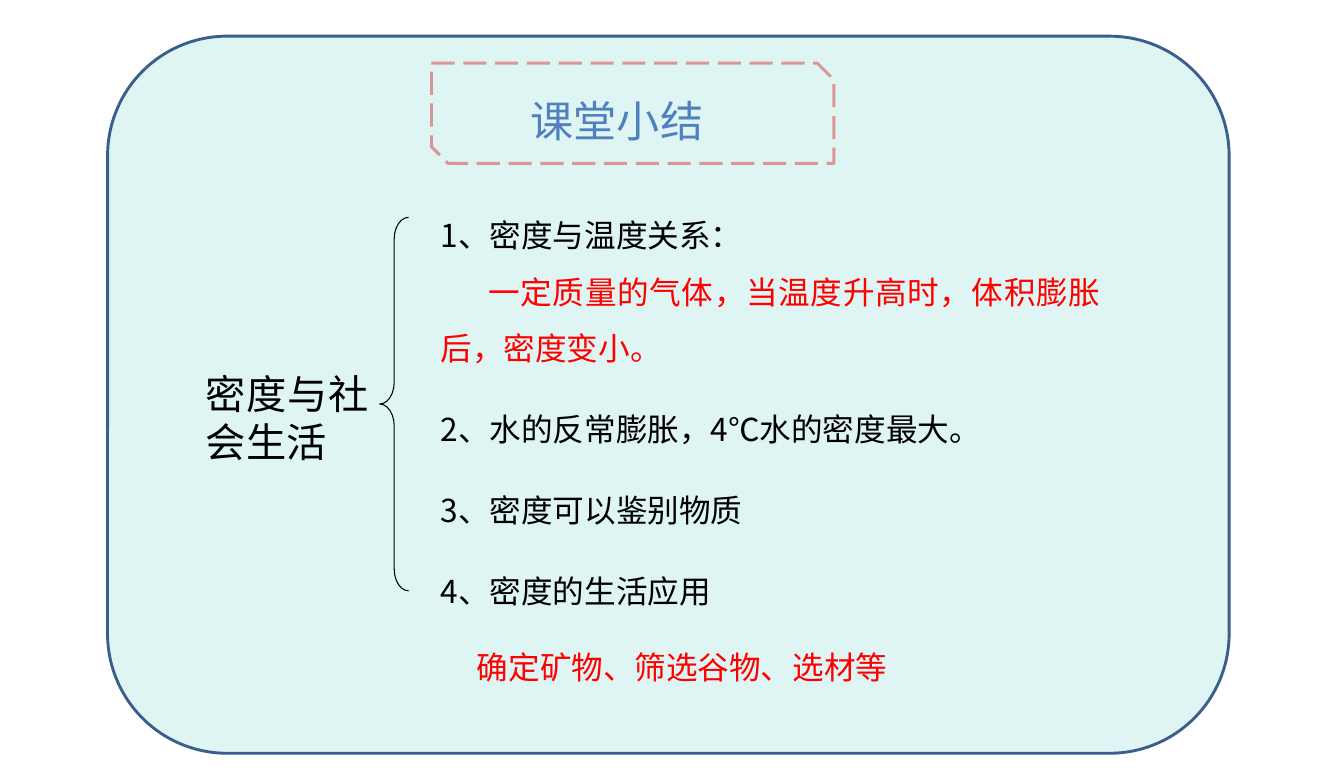
from dataclasses import dataclass
from typing import Optional

from lxml.etree import SubElement
from pptx import Presentation
from pptx.dml.color import RGBColor
from pptx.enum.dml import MSO_LINE_DASH_STYLE as DASH
from pptx.enum.shapes import MSO_SHAPE as SHAPE
from pptx.enum.text import MSO_ANCHOR as ANCHOR, MSO_AUTO_SIZE as AUTO, PP_ALIGN as ALIGN
from pptx.oxml.ns import qn
from pptx.util import Inches, Pt

BLACK = RGBColor(0, 0, 0)
RED = RGBColor(0xFF, 0, 0)
TITLE_BLUE = RGBColor(0x4F, 0x81, 0xBD)
PANEL_FILL = RGBColor(0xDF, 0xF5, 0xF3)
PANEL_LINE = RGBColor(0x3A, 0x5F, 0x8C)
FRAME_PINK = RGBColor(0xD9, 0x96, 0x94)
CJK_FONT = "Noto Sans CJK SC"
TITLE_FONT = "Arial Narrow"


@dataclass(frozen=True)
class Box:
    left: float
    top: float
    width: float
    height: float

    def lengths(self) -> list:
        return [Inches(v) for v in (self.left, self.top, self.width, self.height)]


@dataclass(frozen=True)
class Outline:
    kind: SHAPE
    box: Box
    line: RGBColor
    weight: float
    fill: Optional[RGBColor] = None
    dash: Optional[DASH] = None


@dataclass(frozen=True)
class Line:
    text: str
    color: RGBColor = BLACK
    size: float = 22
    font: str = CJK_FONT
    align: ALIGN = ALIGN.JUSTIFY
    spacing: float = 1.5
    before: float = 0
    indent: float = 0


PANEL = Outline(SHAPE.ROUNDED_RECTANGLE, Box(1.04, 0.35, 10.84, 6.93), PANEL_LINE, 2, PANEL_FILL)
TITLE_FRAME = Outline(SHAPE.SNIP_2_DIAG_RECTANGLE, Box(4.17, 0.61, 3.89, 0.97),
                      FRAME_PINK, 2, dash=DASH.LONG_DASH)
BRACE = Outline(SHAPE.LEFT_BRACE, Box(3.67, 2.1, 0.28, 3.61), BLACK, 0.75)

TITLE = Line("课堂小结", TITLE_BLUE, 30, TITLE_FONT, ALIGN.LEFT)
TOPIC = Line("密度与社会生活", size=28, spacing=1)
SUMMARY = [
    Line("1、密度与温度关系："),
    Line("一定质量的气体，当温度升高时，体积膨胀后，密度变小。", RED, indent=0.46),
    Line("2、水的反常膨胀，4℃水的密度最大。", before=16.8),
    Line("3、密度可以鉴别物质", before=16.8),
    Line("4、密度的生活应用", before=16.8),
]
USES = Line("确定矿物、筛选谷物、选材等", RED)


def add_outline(slide, item: Outline):
    sp = slide.shapes.add_shape(item.kind, *item.box.lengths())
    sp.shadow.inherit = False
    if item.fill is None:
        sp.fill.background()
    else:
        sp.fill.solid()
        sp.fill.fore_color.rgb = item.fill
    sp.line.color.rgb = item.line
    sp.line.width = Pt(item.weight)
    if item.dash is not None:
        sp.line.dash_style = item.dash
    return sp


def write_lines(sp, box: Box, lines: list[Line], wrap: bool = True) -> None:
    sp.left, sp.top, sp.width, sp.height = box.lengths()
    tf = sp.text_frame
    tf.text = "\n".join(line.text for line in lines)
    tf.word_wrap = wrap
    tf.auto_size = AUTO.NONE
    tf.vertical_anchor = ANCHOR.TOP
    tf.margin_left = tf.margin_right = Inches(0.09)
    tf.margin_top = tf.margin_bottom = Inches(0.05)
    for p, line in zip(tf.paragraphs, lines):
        pPr = p._p.get_or_add_pPr()
        pPr.set("marL", "0")
        pPr.set("indent", str(Inches(line.indent)))
        SubElement(pPr, qn("a:buNone"))
        p.alignment = line.align
        p.line_spacing = line.spacing
        p.space_before = Pt(line.before)
        r = p.runs[0]
        r.font.name = line.font
        r.font.size = Pt(line.size)
        r.font.color.rgb = line.color
        SubElement(r._r.get_or_add_rPr(), qn("a:ea")).set("typeface", CJK_FONT)


def add_text(slide, box: Box, line: Line, wrap: bool = True) -> None:
    write_lines(slide.shapes.add_textbox(*box.lengths()), box, [line], wrap)


def main() -> None:
    prs = Presentation()
    prs.slide_width, prs.slide_height = Inches(12.99), Inches(7.48)
    slide = prs.slides.add_slide(prs.slide_layouts[1])

    panel = add_outline(slide, PANEL)
    slide.shapes._spTree.insert(2, panel._element)
    write_lines(slide.shapes.title, Box(5.04, 0.61, 3.47, 0.85), [TITLE])
    add_outline(slide, TITLE_FRAME)

    add_text(slide, Box(1.9, 3.52, 1.75, 1.58), TOPIC)
    brace = add_outline(slide, BRACE)
    brace.adjustments[0] = 0.75
    write_lines(slide.placeholders[1], Box(4.17, 1.85, 6.56, 3.24), SUMMARY)
    add_text(slide, Box(4.52, 6.03, 4.23, 0.67), USES, wrap=False)

    prs.save("out.pptx")


if __name__ == "__main__":
    main()
